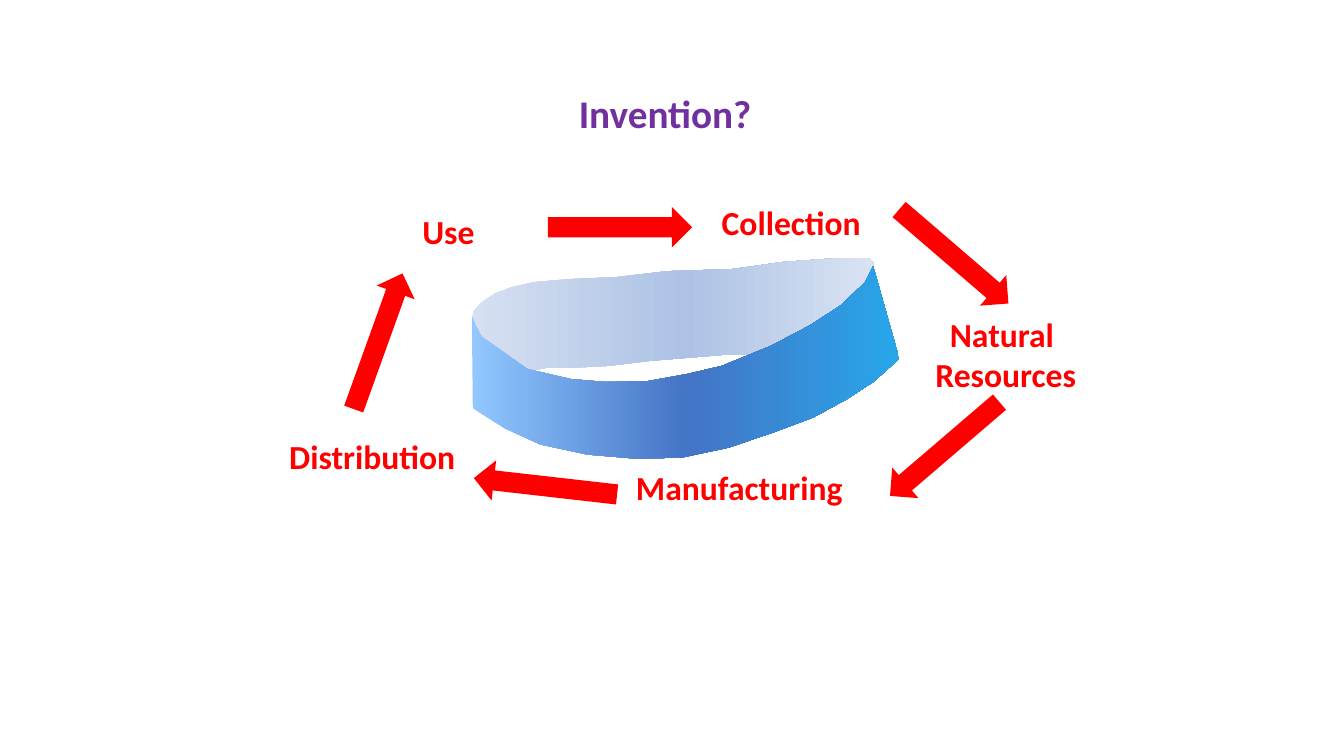
from copy import deepcopy

from pptx import Presentation
from pptx.dml.color import RGBColor
from pptx.enum.shapes import MSO_SHAPE as SHAPE
from pptx.enum.text import MSO_ANCHOR as ANCHOR, MSO_AUTO_SIZE as AUTO, PP_ALIGN as ALIGN
from pptx.util import Inches, Pt

RED, PURPLE = "FF0000", "7030A0"
ARROW_W, ARROW_H = 0.4, 1.43

# Stages: text, left, top, width, height (relative to the cycle box)
STAGES = [
    ("Use", 1.32, 0.5, 1.04, 0.5),
    ("Collection", 4.29, 0.41, 1.6, 0.5),
    ("Natural \nResources", 6.4, 1.52, 1.61, 0.91),
    ("Manufacturing", 3.44, 3.04, 2.27, 0.5),
    ("Distribution", 0, 2.74, 1.87, 0.5),
]
# Arrows: left, top, rotation
ARROWS = [
    (3.18, 0, 270), (6.49, 0.29, 310.7), (6.4, 2.2, 49.4),
    (2.44, 2.57, 96.5), (0.78, 1.13, 199.8),
]
# Ring: outline points relative to the ring box, then gradient stops
INNER_BAND = [
    (0.11, 0.98), (0.02, 0.69), (0.01, 0.53), (0.09, 0.44), (0.23, 0.35),
    (0.39, 0.29), (0.61, 0.24), (0.96, 0.21), (1.43, 0.19), (1.94, 0.13),
    (2.58, 0.11), (3.08, 0.04), (3.49, 0.01), (3.81, 0), (3.93, 0),
    (3.98, 0.04), (3.99, 0.31), (3.55, 0.86), (3.12, 0.95), (2.5, 0.96),
    (2.14, 0.99), (1.77, 1.02), (1.36, 1.07), (0.97, 1.09), (0.74, 1.09),
    (0.43, 1.15),
]
OUTER_BAND = [
    (0, 0.56), (0.01, 1.49), (0.33, 1.69), (0.68, 1.85), (1.15, 1.95),
    (1.63, 1.99), (2.08, 1.98), (2.55, 1.88), (2.99, 1.73), (3.39, 1.58),
    (3.72, 1.4), (3.98, 1.23), (4.24, 1), (3.98, 0.08), (3.9, 0.24),
    (3.66, 0.47), (3.35, 0.67), (2.97, 0.87), (2.48, 1.07), (2.14, 1.15),
    (1.75, 1.22), (1.33, 1.23), (0.98, 1.2), (0.55, 1.1), (0.24, 0.88),
    (0.1, 0.78), (0.04, 0.67),
]
BANDS = [
    (INNER_BAND, [(0, "D6E0F2"), (0.53, "ADC2E5"), (1, "D9E3F3")]),
    (OUTER_BAND, [(0, "92C7FF"), (0.5, "4474C5"), (1, "28A6E9")]),
]


def rgb(color):
    return RGBColor.from_string(color)


def write(tf, text, size, color, align=ALIGN.LEFT, wrap=True):
    frame = {"word_wrap": wrap, "auto_size": AUTO.NONE, "vertical_anchor": ANCHOR.TOP}
    for name, value in frame.items():
        setattr(tf, name, value)
    tf.text = text
    for p in tf.paragraphs:
        p.alignment = align
        for r in p.runs:
            for name, value in {"name": "Calibri", "size": Pt(size), "bold": True}.items():
                setattr(r.font, name, value)
            r.font.color.rgb = rgb(color)


def add_title(s, left, top, width, height):
    sp = s.shapes.title
    box = {"left": left, "top": top, "width": width, "height": height}
    for name, value in box.items():
        setattr(sp, name, Inches(value))
    write(sp.text_frame, "Invention?", 28, PURPLE)


def add_cycle(s, left, top):
    # Stage labels
    for text, x, y, w, h in STAGES:
        sp = s.shapes.add_textbox(Inches(left + x), Inches(top + y), Inches(w), Inches(h))
        align = ALIGN.CENTER if "\n" in text else ALIGN.LEFT
        write(sp.text_frame, text, 24, RED, align, wrap=False)
    # Arrows from stage to stage
    for x, y, rotation in ARROWS:
        sp = s.shapes.add_shape(SHAPE.DOWN_ARROW, Inches(left + x), Inches(top + y),
                                Inches(ARROW_W), Inches(ARROW_H))
        sp.rotation = rotation
        sp.shadow.inherit = False
        sp.fill.solid()
        sp.fill.fore_color.rgb = rgb(RED)
        sp.line.fill.background()


def fill_gradient(sp, colors):
    sp.fill.gradient()
    sp.fill.gradient_angle = 0
    # A third stop is cloned into the default pair
    first = sp._element.spPr.gradFill.gsLst[0]
    first.addnext(deepcopy(first))
    for stop, (position, color) in zip(sp.fill.gradient_stops, colors):
        stop.position = position
        stop.color.rgb = rgb(color)


def add_ring(s, left, top):
    for outline, colors in BANDS:
        points = [(Inches(left + x), Inches(top + y)) for x, y in outline]
        builder = s.shapes.build_freeform(*points[0])
        builder.add_line_segments(points[1:], close=True)
        sp = builder.convert_to_shape()
        sp.shadow.inherit = False
        sp.line.fill.background()
        fill_gradient(sp, colors)


def main():
    prs = Presentation()
    prs.slide_width, prs.slide_height = Inches(13.33), Inches(7.5)
    s = prs.slides.add_slide(prs.slide_layouts[5])
    add_title(s, 5.64, 0.84, 2.21, 0.57)
    add_cycle(s, 2.77, 1.54)
    add_ring(s, 4.68, 2.56)
    prs.save("out.pptx")


if __name__ == "__main__":
    main()
